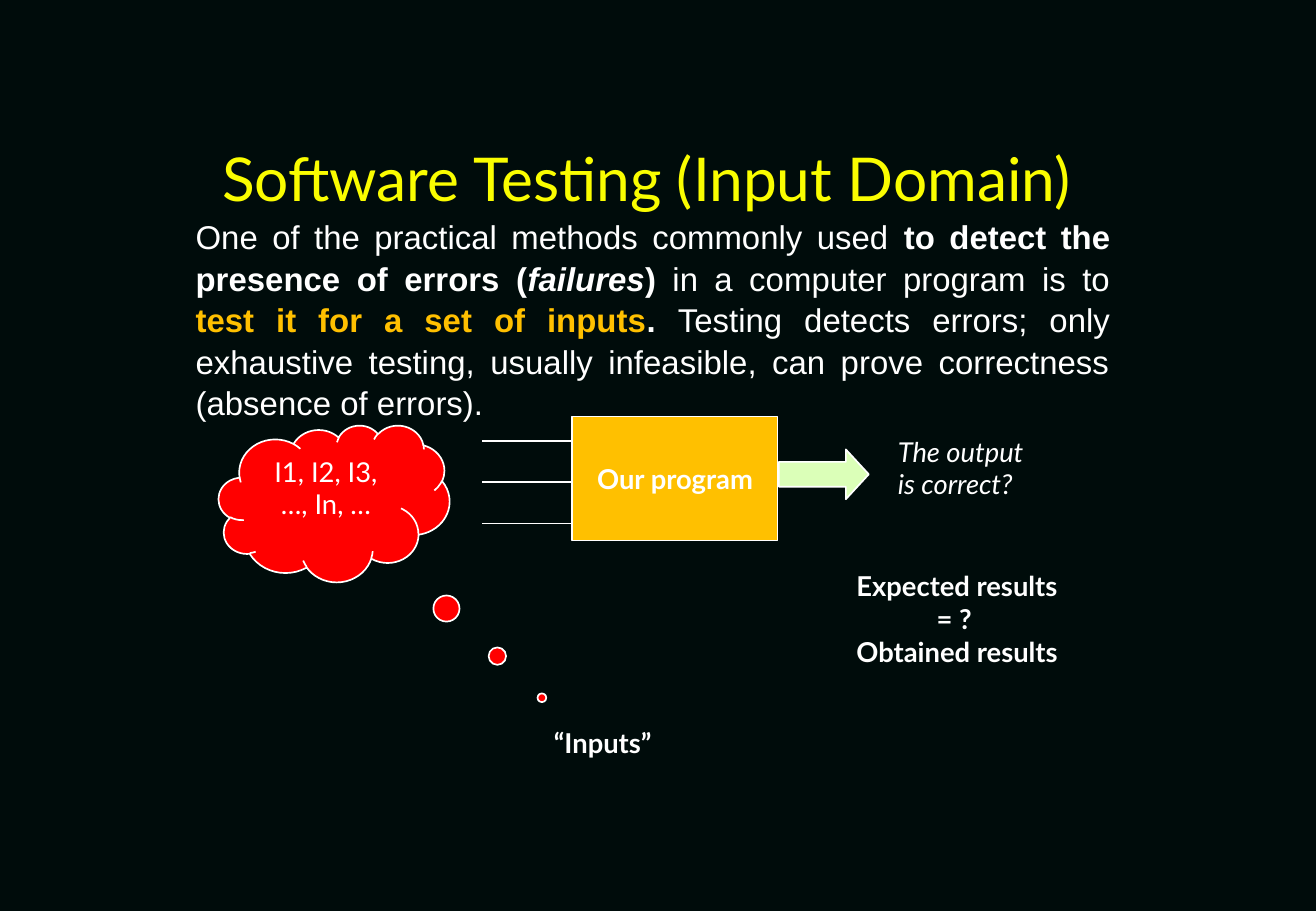
"""Build the slide on software testing and its input domain."""
from pptx import Presentation
from pptx.dml.color import RGBColor
from pptx.enum.shapes import MSO_CONNECTOR, MSO_SHAPE
from pptx.enum.text import MSO_ANCHOR, MSO_AUTO_SIZE, PP_ALIGN
from pptx.oxml.ns import qn
from pptx.util import Inches, Pt
from lxml.etree import SubElement

BACKGROUND = RGBColor(0x00, 0x0C, 0x0B)
WHITE = RGBColor(0xFF, 0xFF, 0xFF)
YELLOW = RGBColor(0xFA, 0xFD, 0x00)
AMBER = RGBColor(0xFF, 0xC0, 0x00)
RED = RGBColor(0xFF, 0x00, 0x00)
PALE_GREEN = RGBColor(0xDB, 0xFF, 0xB8)


def format_paragraph(paragraph, alignment, size=16.2, color=WHITE, name="Lato"):
    paragraph.alignment = alignment
    paragraph.font.name = name
    paragraph.font.size = Pt(size)
    paragraph.font.color.rgb = color


def add_outlined_shape(kind, left, top, width, height, fill):
    shape = slide.shapes.add_shape(
        kind, Inches(left), Inches(top), Inches(width), Inches(height))
    shape.shadow.inherit = False
    shape.fill.solid()
    shape.fill.fore_color.rgb = fill
    shape.line.color.rgb = WHITE
    shape.line.width = Pt(1)
    return shape


presentation = Presentation()
presentation.slide_width = Inches(10.83)
presentation.slide_height = Inches(7.5)
slide = presentation.slides.add_slide(presentation.slide_layouts[1])
slide.background.fill.solid()
slide.background.fill.fore_color.rgb = BACKGROUND

title = slide.shapes.title
title.left, title.top = Inches(0.48), Inches(1.11)
title.width, title.height = Inches(9.68), Inches(0.7)
title.text_frame.text = "Software Testing (Input Domain)"
title.text_frame.auto_size = MSO_AUTO_SIZE.NONE
format_paragraph(title.text_frame.paragraphs[0], PP_ALIGN.CENTER, 35.8, YELLOW)

body = slide.placeholders[1]
body.left, body.top = Inches(1.51), Inches(1.72)
body.width, body.height = Inches(7.73), Inches(1.74)
body.text_frame.auto_size = MSO_AUTO_SIZE.NONE
paragraph = body.text_frame.paragraphs[0]
format_paragraph(paragraph, PP_ALIGN.JUSTIFY, 19.5, WHITE, "Arial")
paragraph.space_before = Pt(0)
paragraph.line_spacing = 1.05
properties = paragraph._p.get_or_add_pPr()
properties.set("marL", "0")
properties.set("indent", "0")
properties.insert_element_before(
    properties.makeelement(qn("a:buNone"), {}), "a:tabLst", "a:defRPr", "a:extLst")
for text, bold, italic, color in [
    ("One of the practical methods commonly used ", False, False, WHITE),
    ("to detect the presence of errors (", True, False, WHITE),
    ("failures", True, True, WHITE),
    (")", True, False, WHITE),
    (" in a computer program is to ", False, False, WHITE),
    ("test it for a set of inputs", True, False, AMBER),
    (". ", True, False, WHITE),
    ("Testing detects errors; only exhaustive testing, usually infeasible, "
     "can prove correctness (absence of errors).", False, False, WHITE),
]:
    run = paragraph.add_run()
    run.text = text
    run.font.bold = bold
    run.font.italic = italic
    run.font.color.rgb = color

program = add_outlined_shape(MSO_SHAPE.RECTANGLE, 4.71, 3.43, 1.69, 1.02, AMBER)
program.text_frame.text = "Our program"
program.text_frame.word_wrap = False
program.text_frame.vertical_anchor = MSO_ANCHOR.MIDDLE
format_paragraph(program.text_frame.paragraphs[0], PP_ALIGN.CENTER)
program.text_frame.paragraphs[0].font.bold = True

for row in range(3):
    y = Inches(3.63 + 0.34 * row)
    input_line = slide.shapes.add_connector(
        MSO_CONNECTOR.STRAIGHT, Inches(3.97), y, Inches(4.71), y)
    input_line.line.color.rgb = WHITE
    input_line.line.width = Pt(1)
    SubElement(input_line._element.spPr, qn("a:effectLst"))

output_arrow = add_outlined_shape(
    MSO_SHAPE.RIGHT_ARROW, 6.41, 3.7, 0.74, 0.41, PALE_GREEN)
output_arrow.adjustments[1] = 0.46

cloud = add_outlined_shape(MSO_SHAPE.CLOUD_CALLOUT, 1.8, 3.5, 1.9, 1.29, RED)
cloud.adjustments[0] = 0.9
cloud.adjustments[1] = 1.24
cloud.text_frame.text = "I1, I2, I3, …, In, …"
cloud.text_frame.word_wrap = True
cloud.text_frame.vertical_anchor = MSO_ANCHOR.TOP
format_paragraph(cloud.text_frame.paragraphs[0], PP_ALIGN.CENTER)

for left, top, width, height, lines, bold in [
    (7.29, 3.53, 1.38, 0.65, ["The output", "is correct?"], False),
    (6.95, 4.64, 2.16, 0.92, ["Expected results", "= ?", "Obtained results"], True),
    (4.46, 5.93, 1.18, 0.38, ["“Inputs”"], True),
]:
    label = slide.shapes.add_textbox(
        Inches(left), Inches(top), Inches(width), Inches(height))
    label.text_frame.word_wrap = True
    label.text_frame.text = "\n".join(lines)
    for paragraph in label.text_frame.paragraphs:
        format_paragraph(paragraph, PP_ALIGN.LEFT)
        paragraph.font.bold = bold
        paragraph.font.italic = not bold
        if paragraph.text == "= ?":
            paragraph._p.get_or_add_pPr().set("marL", str(Inches(0.66)))

presentation.save("out.pptx")
